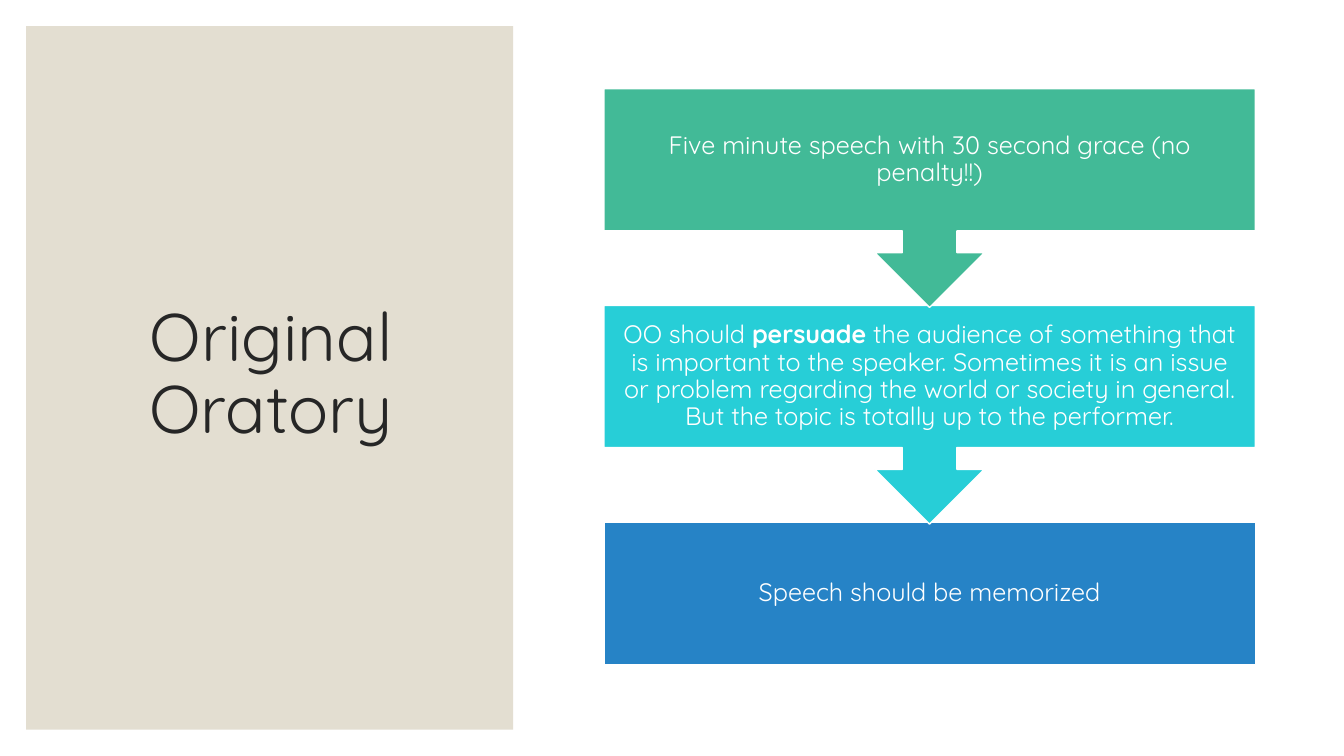
from pptx import Presentation
from pptx.dml.color import RGBColor
from pptx.enum.shapes import MSO_SHAPE
from pptx.enum.text import MSO_ANCHOR, PP_ALIGN
from pptx.util import Inches, Pt

RECTANGLE = MSO_SHAPE.RECTANGLE
CALLOUT = MSO_SHAPE.DOWN_ARROW_CALLOUT
MIDDLE, CENTER = MSO_ANCHOR.MIDDLE, PP_ALIGN.CENTER

WHITE = RGBColor(0xFF, 0xFF, 0xFF)
INK = RGBColor(0x26, 0x26, 0x26)
SAND = RGBColor(0xE3, 0xDE, 0xD1)
GREEN = RGBColor(0x42, 0xBA, 0x97)
CYAN = RGBColor(0x27, 0xCE, 0xD7)
BLUE = RGBColor(0x26, 0x83, 0xC6)

TITLE = "Original Oratory"
# Each step: fill colour and its spans as (text, bold)
STEPS = [
    (GREEN, [("Five minute speech with 30 second grace (no penalty!!)", False)]),
    (CYAN, [
        ("OO should ", False),
        ("persuade", True),
        (" the audience of something that is important to the speaker. "
         "Sometimes it is an issue or problem regarding the world or society "
         "in general. But the topic is totally up to the performer.", False),
    ]),
    (BLUE, [("Speech should be memorized", False)]),
]

PAGE_WIDTH, PAGE_HEIGHT = 13.33, 7.5
MARGIN = 0.26
PANEL_WIDTH = 4.83
STEP_LEFT, STEP_TOP, STEP_WIDTH = 5.99, 0.88, 6.46
STEP_PITCH = 2.15
CALLOUT_HEIGHT, BOX_HEIGHT = 2.17, 1.41


def add_block(page, kind, place, fill, line=None):
    block = page.shapes.add_shape(kind, *map(Inches, place))
    block.shadow.inherit = False
    block.fill.solid()
    block.fill.fore_color.rgb = fill
    if line is None:
        block.line.fill.background()
    else:
        block.line.color.rgb = line
        block.line.width = Pt(1)
    return block


def write(box, spans, size, color, inset_x, inset_y):
    frame = box.text_frame
    frame_format = {
        "word_wrap": True, "vertical_anchor": MIDDLE,
        "margin_left": Inches(inset_x), "margin_right": Inches(inset_x),
        "margin_top": Inches(inset_y), "margin_bottom": Inches(inset_y),
    }
    for name, value in frame_format.items():
        setattr(frame, name, value)
    para = frame.paragraphs[0]
    para.alignment = CENTER
    para.line_spacing = 0.9
    for text, bold in spans:
        span = para.add_run()
        span.text = text
        span.font.color.rgb = color
        for name, value in {"name": "Quicksand", "size": Pt(size), "bold": bold}.items():
            setattr(span.font, name, value)


def main():
    deck = Presentation()
    deck.slide_width, deck.slide_height = Inches(PAGE_WIDTH), Inches(PAGE_HEIGHT)
    page = deck.slides.add_slide(deck.slide_layouts[6])
    page.background.fill.solid()
    page.background.fill.fore_color.rgb = WHITE

    add_block(page, RECTANGLE,
              (MARGIN, MARGIN, PANEL_WIDTH, PAGE_HEIGHT - 2 * MARGIN), SAND)
    title = page.shapes.add_textbox(*map(Inches, (0.63, 0.61, 4.12, 6.24)))
    write(title, [(TITLE, False)], 48, INK, 0.1, 0.05)

    # Bottom step first, so that each arrow tip lies over the step below it
    last = len(STEPS) - 1
    for row in range(last, -1, -1):
        fill, spans = STEPS[row]
        kind, height = (RECTANGLE, BOX_HEIGHT) if row == last else (CALLOUT, CALLOUT_HEIGHT)
        place = (STEP_LEFT, STEP_TOP + row * STEP_PITCH, STEP_WIDTH, height)
        step = add_block(page, kind, place, fill, WHITE)
        write(step, spans, 18, WHITE, 0.14, 0.14)

    deck.save("out.pptx")


if __name__ == "__main__":
    main()
